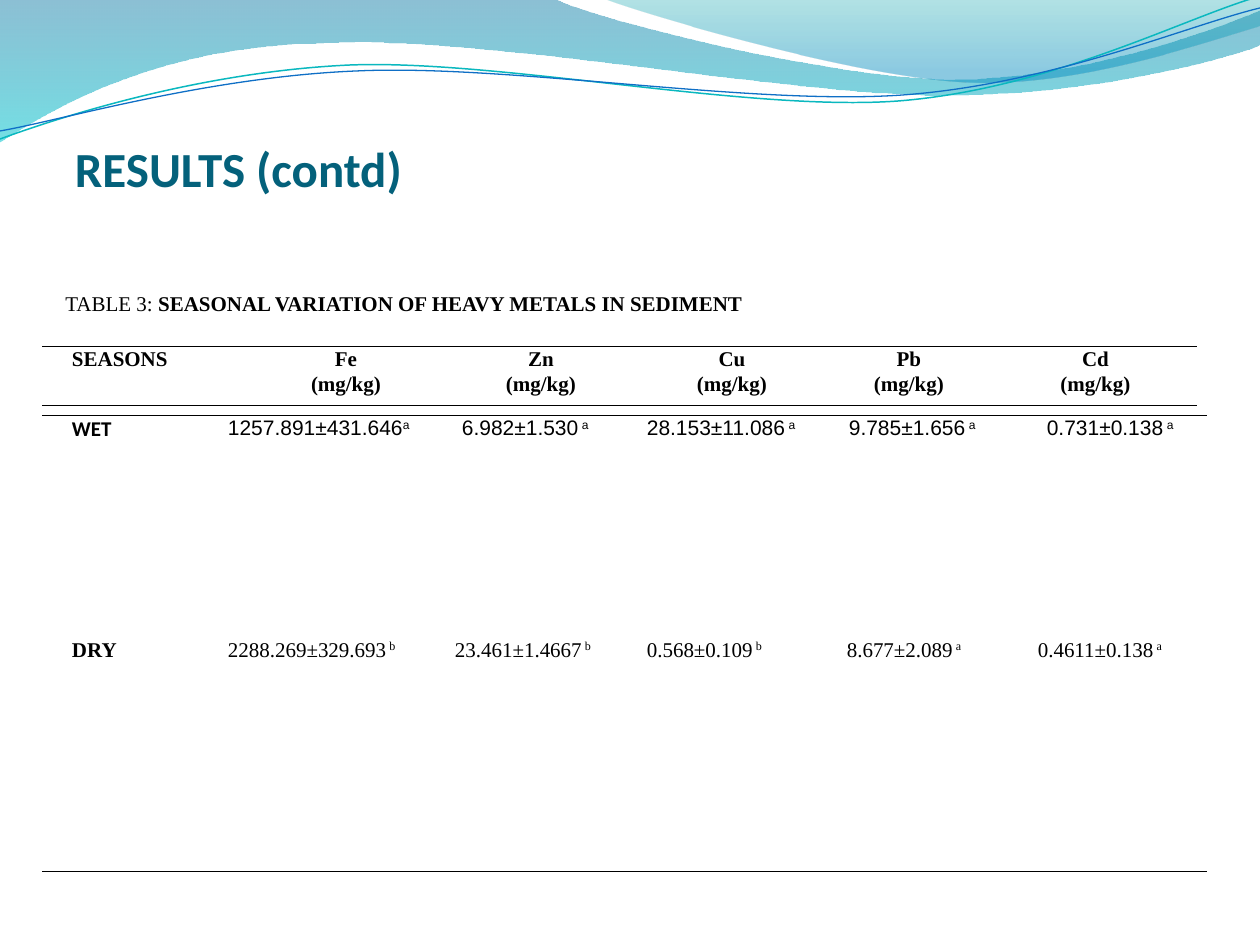
import lxml.etree
import pptx
import pptx.dml.color
import pptx.enum.text
import pptx.oxml.ns
import pptx.util

PX = 914400 / 126
COLORS = {"title": "04617B", "text": "000000", "teal": "0AB8BF", "blue": "0F6FC6"}
SERIF = "Times New Roman"
NO_STYLE = "{2D5ABB26-0587-4C30-8999-92F81FD0307C}"
LEFT = pptx.enum.text.PP_ALIGN.LEFT
CENTER = pptx.enum.text.PP_ALIGN.CENTER
qn = pptx.oxml.ns.qn

# Each wave is a start point, then lines (2 numbers) and Bezier curves (6 numbers).
BANDS = [
    ([(0, 0), (554, -1), (600, 21, 837, 79, 955, 79), (1075, 79, 1207, 33, 1260, 11),
      (1261, 45), (1239, 55, 1096, 96, 940, 95), (784, 95, 481, 35, 324, 43),
      (163, 45, 58, 105, -1, 142)],
     [(0, "0074A1", 45), (1, "00C6CF", 55)]),
    ([(604, -1), (641, 14, 859, 78, 969, 82), (1079, 87, 1211, 40, 1260, 26), (1260, 0)],
     [(0, "00A1A9", 30), (0.8, "008BBF", 45)]),
]
STRANDS = [
    ([(0, 139), (60, 117, 199, 72, 349, 65), (498, 59, 747, 112, 898, 101),
      (1050, 89, 1182, 19, 1257, -3)], "teal", 0.85),
    ([(0, 131), (59, 121, 207, 77, 357, 71), (508, 64, 752, 106, 903, 95),
      (1053, 84, 1186, 26, 1260, 8)], "blue", 0.75),
]

HEADER_COLS = [196, 192, 208, 180, 176, 203]
HEADER_INDENTS = [24, 24, 14, 8, 6, 0]
METALS = ["Fe", "Zn", "Cu", "Pb", "Cd"]
DATA_COLS = [180, 197, 214, 186, 181, 207]
# Season, label font, value font, indents, (value, superscript) pairs
SEASONS = [
    ("WET", "Calibri", "Arial", [24, 0, 37, 8, 24, 41],
     [("1257.891±431.646", "a"), ("6.982±1.530", " a"), ("28.153±11.086", " a"),
      ("9.785±1.656", " a"), ("0.731±0.138", " a")]),
    ("DRY", SERIF, SERIF, [24, 0, 30, 8, 22, 32],
     [("2288.269±329.693", " b"), ("23.461±1.4667", " b"), ("0.568±0.109", " b"),
      ("8.677±2.089", " a"), ("0.4611±0.138", " a")]),
]


def px(n):
    return pptx.util.Emu(round(n * PX))


def rgb(value):
    return pptx.dml.color.RGBColor.from_string(value)


def apply(obj, **values):
    for name, value in values.items():
        setattr(obj, name, value)


def add_run(p, text, font, size=12, bold=False, color="text", superscript=False):
    r = p.add_run()
    r.text = text
    apply(r.font, name=font, size=pptx.util.Pt(size), bold=bold)
    r.font.color.rgb = rgb(COLORS[color])
    if superscript:
        r._r.get_or_add_rPr().set("baseline", "30000")


def add_outline(slide, outline, close):
    """Build a freeform through all points, then join each curve's three into a Bezier."""
    points = [(px(s[i]), px(s[i + 1])) for s in outline for i in range(0, len(s), 2)]
    builder = slide.shapes.build_freeform(*points[0])
    builder.add_line_segments(points[1:], close=close)
    sp = builder.convert_to_shape()
    sp.shadow.inherit = False
    lines = iter(list(sp._element.iter(qn("a:lnTo"))))
    for segment in outline[1:]:
        first = next(lines)
        if len(segment) == 6:
            curve = lxml.etree.Element(qn("a:cubicBezTo"))
            first.addprevious(curve)
            for line in (first, next(lines), next(lines)):
                curve.append(line[0])
                line.getparent().remove(line)
    return sp


def add_band(slide, outline, stops):
    sp = add_outline(slide, outline, True)
    sp.line.fill.background()
    sp.fill.gradient()
    sp.fill.gradient_angle = 270
    for stop, (position, color, _) in zip(sp.fill.gradient_stops, stops):
        stop.position = position
        stop.color.rgb = rgb(color)
    clrs = sp._element.spPr.iter(qn("a:srgbClr"))
    for clr, (_, _, alpha) in zip(list(clrs), stops):
        lxml.etree.SubElement(clr, qn("a:alpha"), val=str(alpha * 1000))


def add_strand(slide, outline, color, width):
    sp = add_outline(slide, outline, False)
    sp.fill.background()
    sp.line.color.rgb = rgb(COLORS[color])
    sp.line.width = pptx.util.Pt(width)


def set_title(slide, text):
    sp = slide.shapes.title
    apply(sp, left=px(53), top=px(126), width=px(1134), height=px(71))
    tf = sp.text_frame
    apply(tf, margin_left=px(22), margin_top=px(6), margin_right=0, margin_bottom=0,
          vertical_anchor=pptx.enum.text.MSO_ANCHOR.BOTTOM,
          auto_size=pptx.enum.text.MSO_AUTO_SIZE.NONE)
    p = tf.paragraphs[0]
    p.alignment = LEFT
    add_run(p, text, "Calibri", 28, True, "title")


def add_caption(slide, label, text):
    tf = slide.shapes.add_textbox(px(53), px(284), px(708), px(77)).text_frame
    apply(tf, word_wrap=False, margin_top=px(7))
    p = tf.paragraphs[0]
    add_run(p, label, SERIF)
    add_run(p, text, SERIF, bold=True)


def add_plain_table(slide, left, top, cols, rows):
    frame = slide.shapes.add_table(len(rows), len(cols), px(left), px(top),
                                   px(sum(cols)), px(sum(rows)))
    table = frame.table
    apply(table, first_row=False, horz_banding=False)
    table._tbl.tblPr.find(qn("a:tableStyleId")).text = NO_STYLE
    for column, width in zip(table.columns, cols):
        column.width = px(width)
    for row, height in zip(table.rows, rows):
        row.height = px(height)
    for r in range(len(rows)):
        for c in range(len(cols)):
            cell = table.cell(r, c)
            apply(cell, margin_left=px(6), margin_right=px(6), margin_top=0, margin_bottom=0)
            if r == 0:
                add_border(cell, "a:lnT")
            if r == len(rows) - 1:
                add_border(cell, "a:lnB")
            cell.fill.background()
    return table


def add_border(cell, side):
    ln = lxml.etree.SubElement(cell._tc.get_or_add_tcPr(), qn(side), w="6350")
    fill = lxml.etree.SubElement(ln, qn("a:solidFill"))
    lxml.etree.SubElement(fill, qn("a:srgbClr"), val=COLORS["text"])


def write_cell(cell, lines, indent, align=LEFT):
    """Write one paragraph per line; a line is a list of run arguments."""
    tf = cell.text_frame
    for i, runs in enumerate(lines):
        p = tf.add_paragraph() if i else tf.paragraphs[0]
        apply(p, alignment=align, line_spacing=1.07)
        p._p.get_or_add_pPr().set("marL", str(px(indent)))
        for run in runs:
            add_run(p, **run)


def add_header_table(slide):
    table = add_plain_table(slide, 42, 346, HEADER_COLS, [59])
    headings = [["SEASONS"]] + [[metal, "(mg/kg)"] for metal in METALS]
    for c, (lines, indent) in enumerate(zip(headings, HEADER_INDENTS)):
        runs = [[dict(text=line, font=SERIF, bold=True)] for line in lines]
        write_cell(table.cell(0, c), runs, indent, CENTER if c else LEFT)


def add_data_table(slide):
    table = add_plain_table(slide, 42, 415, DATA_COLS, [222, 234])
    for r, (season, label_font, font, indents, values) in enumerate(SEASONS):
        cells = [[dict(text=season, font=label_font, bold=True)]]
        cells += [[dict(text=value, font=font), dict(text=mark, font=font, superscript=True)]
                  for value, mark in values]
        for c, (runs, indent) in enumerate(zip(cells, indents)):
            write_cell(table.cell(r, c), [runs], indent)


def main():
    prs = pptx.Presentation()
    apply(prs, slide_width=px(1260), slide_height=px(945))
    slide = prs.slides.add_slide(prs.slide_layouts[5])
    for band in BANDS:
        add_band(slide, *band)
    for strand in STRANDS:
        add_strand(slide, *strand)
    set_title(slide, "RESULTS (contd)")
    add_data_table(slide)
    add_header_table(slide)
    add_caption(slide, "TABLE 3: ", "SEASONAL VARIATION OF HEAVY METALS IN SEDIMENT")
    prs.save("out.pptx")


if __name__ == "__main__":
    main()
